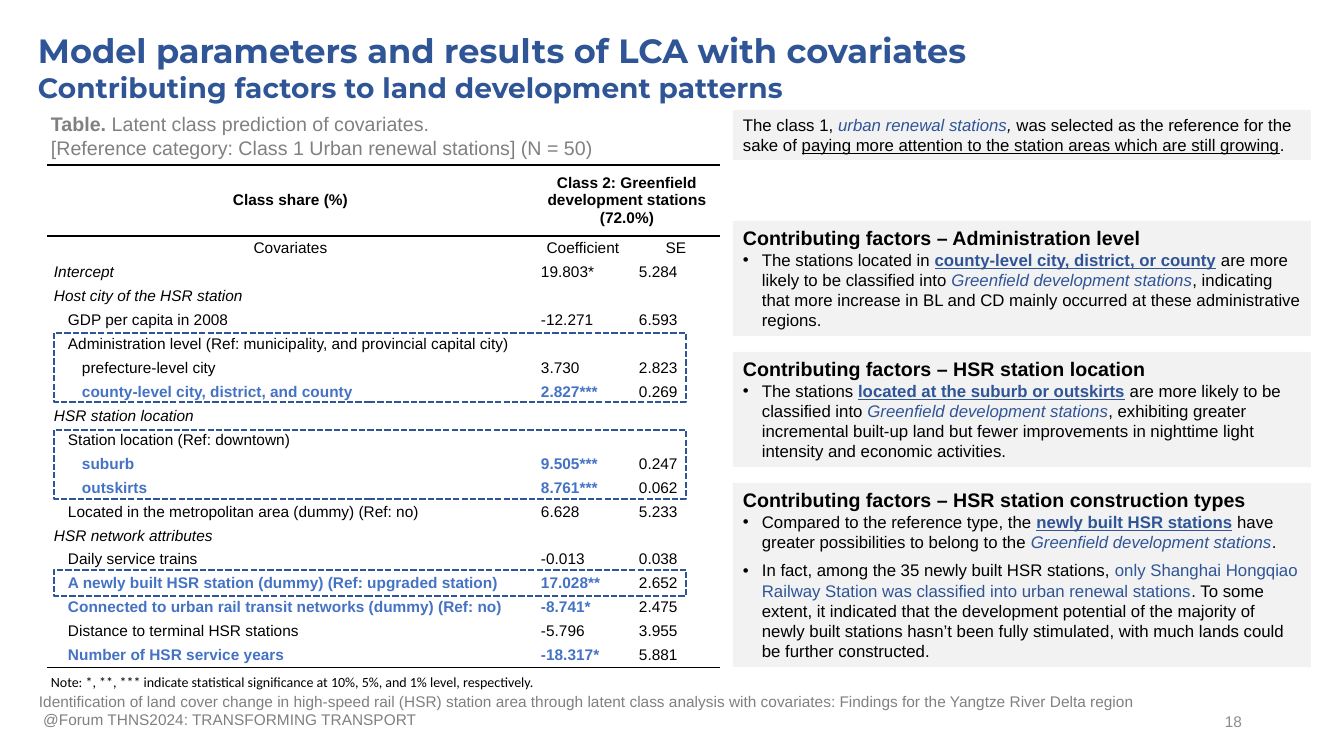
from dataclasses import dataclass

from lxml import etree
from pptx import Presentation
from pptx.dml.color import RGBColor
from pptx.enum.dml import MSO_LINE
from pptx.enum.shapes import MSO_SHAPE
from pptx.enum.text import MSO_ANCHOR, MSO_AUTO_SIZE, PP_ALIGN
from pptx.oxml.ns import qn
from pptx.util import Emu, Pt

LEFT, CENTER, RIGHT, JUST = PP_ALIGN.LEFT, PP_ALIGN.CENTER, PP_ALIGN.RIGHT, PP_ALIGN.JUSTIFY
TOP, MIDDLE = MSO_ANCHOR.TOP, MSO_ANCHOR.MIDDLE
GROW, FIXED = MSO_AUTO_SIZE.SHAPE_TO_FIT_TEXT, MSO_AUTO_SIZE.NONE
RECT, DASH = MSO_SHAPE.RECTANGLE, MSO_LINE.SQUARE_DOT
SCALE = 9071
PLAIN = "{2D5ABB26-0587-4C30-8999-92F81FD0307C}"


@dataclass(frozen=True)
class Theme:
    black: str = "000000"
    navy: str = "2F5597"
    sky: str = "4472C4"
    gray: str = "808080"
    pale: str = "8C8C8C"
    panel: str = "F2F2F2"
    body: str = "Arial"
    display: str = "Montserrat"
    small: str = "Calibri"
    title: int = 24
    lead: int = 20
    head: int = 14
    text: int = 12
    cell: int = 11
    note: int = 10


THEME = Theme()

ROWS = [
    (0, "i", "Intercept", "19.803*", "5.284"),
    (0, "i", "Host city of the HSR station", "", ""),
    (1, "", "GDP per capita in 2008", "-12.271", "6.593"),
    (1, "", "Administration level (Ref: municipality, and provincial capital city)", "", ""),
    (2, "", "prefecture-level city", "3.730", "2.823"),
    (2, "b", "county-level city, district, and county", "2.827***", "0.269"),
    (0, "i", "HSR station location", "", ""),
    (1, "", "Station location (Ref: downtown)", "", ""),
    (2, "b", "suburb", "9.505***", "0.247"),
    (2, "b", "outskirts", "8.761***", "0.062"),
    (1, "", "Located in the metropolitan area (dummy) (Ref: no)", "6.628", "5.233"),
    (0, "i", "HSR network attributes", "", ""),
    (1, "", "Daily service trains", "-0.013", "0.038"),
    (1, "b", "A newly built HSR station (dummy) (Ref: upgraded station)", "17.028**", "2.652"),
    (1, "b", "Connected to urban rail transit networks (dummy) (Ref: no)", "-8.741*", "2.475"),
    (1, "", "Distance to terminal HSR stations", "-5.796", "3.955"),
    (1, "b", "Number of HSR service years", "-18.317*", "5.881"),
]

PANELS = [
    (221, 115, "Administration level", 0, [[
        ("The stations located in ",),
        ("county-level city, district, or county", "bu", THEME.navy),
        (" are more likely to be classified into ",),
        ("Greenfield development stations", "i", THEME.navy),
        (", indicating that more increase in BL and CD mainly occurred at these "
         "administrative regions.",)]]),
    (352, 115, "HSR station location", 0, [[
        ("The stations ",),
        ("located at the suburb or outskirts", "bu", THEME.navy),
        (" are more likely to be classified into ",),
        ("Greenfield development stations", "i", THEME.navy),
        (", exhibiting greater incremental built-up land but fewer improvements in "
         "nighttime light intensity and economic activities.",)]]),
    (483, 184, "HSR station construction types", 6, [[
        ("Compared to the reference type, the ",),
        ("newly built HSR stations", "bu", THEME.navy),
        (" have greater possibilities to belong to the ",),
        ("Greenfield development stations", "i", THEME.navy),
        (".",)], [
        ("In fact, among the 35 newly built HSR stations, ",),
        ("only Shanghai Hongqiao Railway Station was classified into urban renewal stations",
         "", THEME.navy),
        (". To some extent, it indicated that the development potential of the majority of "
         "newly built stations hasn’t been fully stimulated, with much lands could be "
         "further constructed.",)]]),
]


def px(value):
    return Emu(value * SCALE)


def add_run(para, size, face, text, flags="", color=THEME.black):
    run = para.add_run()
    run.text = text
    font = run.font
    font.size, font.name = Pt(size), face
    font.color.rgb = RGBColor.from_string(color)
    font.bold, font.italic, font.underline = (flag in flags for flag in "biu")


def add_para(frame, runs, size, face=THEME.body, align=LEFT, bullet=False, after=0):
    first = frame.paragraphs[0]
    para = frame.add_paragraph() if first.runs else first
    para.alignment = align
    if bullet:
        props = para._p.get_or_add_pPr()
        props.set("marL", str(px(19)))
        props.set("indent", str(px(-19)))
        etree.SubElement(props, qn("a:buFont")).set("typeface", THEME.body)
        etree.SubElement(props, qn("a:buChar")).set("char", "•")
        para.space_after = Pt(after)
    for run in runs:
        add_run(para, size, face, *run)


def add_text(slide, box, wrap=True, anchor=TOP, fit=GROW):
    frame = slide.shapes.add_textbox(*map(px, box)).text_frame
    frame.word_wrap, frame.vertical_anchor, frame.auto_size = wrap, anchor, fit
    return frame


def add_panel(slide, top, height):
    shape = slide.shapes.add_shape(RECT, px(733), px(top), px(578), px(height))
    shape.shadow.inherit = False
    shape.fill.solid()
    shape.fill.fore_color.rgb = RGBColor.from_string(THEME.panel)
    shape.line.fill.background()
    frame = shape.text_frame
    frame.word_wrap, frame.vertical_anchor, frame.auto_size = True, TOP, GROW
    return frame


def add_frame(slide, top, height):
    shape = slide.shapes.add_shape(RECT, px(54), px(top), px(632), px(height))
    shape.shadow.inherit = False
    shape.fill.background()
    shape.line.color.rgb = RGBColor.from_string(THEME.navy)
    shape.line.width = Pt(1.5)
    shape.line.dash_style = DASH


def add_rule(cell, side):
    line = etree.SubElement(cell._tc.get_or_add_tcPr(), qn(f"a:ln{side}"), w=str(Pt(1)))
    fill = etree.SubElement(line, qn("a:solidFill"))
    etree.SubElement(fill, qn("a:srgbClr"), val=THEME.black)


def fill_cell(cell, text, flags="", color=THEME.black, align=JUST, level=0, rules=""):
    for side in rules:
        add_rule(cell, side)
    cell.fill.background()
    cell.vertical_anchor = MIDDLE
    cell.margin_left = cell.margin_right = px(7)
    cell.margin_top = cell.margin_bottom = 0
    para = cell.text_frame.paragraphs[0]
    if text:
        add_para(cell.text_frame, [(text, flags, color)], THEME.cell, align=align)
        para._p.get_or_add_pPr().set("indent", str(px(14 * level)))
    else:
        etree.SubElement(para._p, qn("a:endParaRPr"), sz=str(THEME.cell * 100))


def add_grid(slide):
    count = len(ROWS) + 2
    shape = slide.shapes.add_table(count, 3, px(47), px(165), px(673), px(71 + 24 * (count - 1)))
    grid = shape.table
    grid.first_row = grid.horz_banding = False
    grid._tbl.tblPr.find(qn("a:tableStyleId")).text = PLAIN
    for col, width in zip(grid.columns, (487, 98, 88)):
        col.width = px(width)
    for index, row in enumerate(grid.rows):
        row.height = px(24 if index else 71)
    grid.cell(0, 1).merge(grid.cell(0, 2))
    heads = ("Class share (%)", "Class 2: Greenfield development stations (72.0%)", "")
    for col, text in enumerate(heads):
        fill_cell(grid.cell(0, col), text, "b", align=CENTER, rules="TB")
    for col, text in enumerate(("Covariates", "Coefficient", "SE")):
        fill_cell(grid.cell(1, col), text, align=CENTER)
    for index, (level, flags, label, coef, error) in enumerate(ROWS, 2):
        rules = "B" if index == count - 1 else ""
        strong = "b" if flags == "b" else ""
        color = THEME.sky if strong else THEME.black
        fill_cell(grid.cell(index, 0), label, flags, color, level=level, rules=rules)
        fill_cell(grid.cell(index, 1), coef, strong, color, rules=rules)
        fill_cell(grid.cell(index, 2), error, rules=rules)


def main():
    deck = Presentation()
    deck.slide_width, deck.slide_height = px(1344), px(756)
    slide = deck.slides.add_slide(deck.slide_layouts[6])

    foot = add_text(slide, (29, 687, 1152, 47))
    for text in ("Identification of land cover change in high-speed rail (HSR) station area through "
                 "latent class analysis with covariates: Findings for the Yangtze River Delta region",
                 " @Forum THNS2024: TRANSFORMING TRANSPORT"):
        add_para(foot, [(text, "", THEME.gray)], THEME.cell)
    page = add_text(slide, (950, 701, 302, 40), anchor=MIDDLE, fit=FIXED)
    add_para(page, [("18", "", THEME.pale)], THEME.cell, align=RIGHT)

    title = add_text(slide, (28, 25, 1025, 85), wrap=False)
    for text, size in (("Model parameters and results of LCA with covariates", THEME.title),
                       ("Contributing factors to land development patterns", THEME.lead)):
        add_para(title, [(text, "b", THEME.navy)], size, THEME.display)

    add_para(add_panel(slide, 110, 50), [
        ("The class 1, ",),
        ("urban renewal stations", "i", THEME.navy),
        (",", "i"),
        (" was selected as the reference for the sake of ",),
        ("paying more attention to the station areas which are still growing", "u"),
        (".",)], THEME.text)

    label = add_text(slide, (41, 107, 679, 57))
    add_para(label, [("Table. ", "b", THEME.gray),
                     ("Latent class prediction of covariates.", "", THEME.gray)], THEME.head)
    add_para(label, [("[Reference category: Class 1 Urban renewal stations] (N = 50)",
                      "", THEME.gray)], THEME.head)
    add_grid(slide)
    note = add_text(slide, (41, 668, 512, 27), wrap=False, anchor=MIDDLE)
    add_para(note, [("Note: *, **, *** indicate statistical significance at 10%, 5%, and 1% level, "
                     "respectively.",)], THEME.note, THEME.small)

    for top, height, topic, after, points in PANELS:
        panel = add_panel(slide, top, height)
        add_para(panel, [(f"Contributing factors – {topic}", "b")], THEME.head)
        for runs in points:
            add_para(panel, runs, THEME.text, bullet=True, after=after)
    for top, height in ((333, 69), (430, 69), (570, 26)):
        add_frame(slide, top, height)
    deck.save("out.pptx")


if __name__ == "__main__":
    main()
